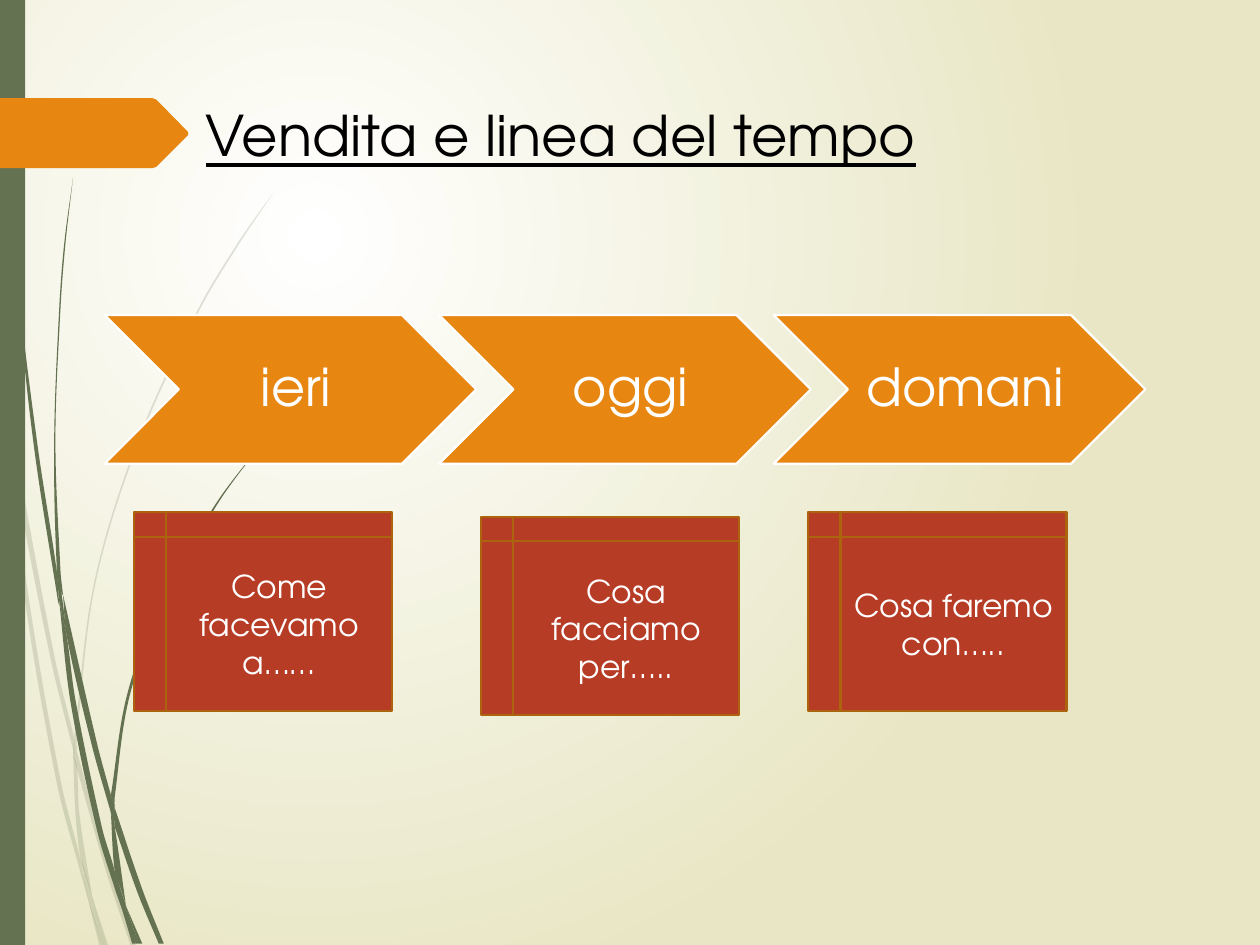
from collections import namedtuple
from math import hypot
from lxml.etree import SubElement
from pptx import Presentation
from pptx.dml.color import RGBColor
from pptx.enum.shapes import MSO_SHAPE
from pptx.enum.text import MSO_ANCHOR, PP_ALIGN
from pptx.oxml.ns import qn
from pptx.util import Inches, Pt

COLORS = {
    "paper": "FFFFFF",
    "cream": "E8E6C4",
    "moss": "647252",
    "orange": "E78712",
    "brick": "B73C26",
    "bronze": "AB640D",
    "ink": "000000",
}
FONT = "TeX Gyre Adventor"
COLUMNS, ROWS = 100, 75
CELL = Inches(0.1)
Box = namedtuple("Box", "left top width height")

FADED_BLADES = [
    ([(0.8, 35), (0.6, 32.2), (0, 28.2)], [(0, 29.9), (0.7, 34.4), (0.8, 35)]),
    ([(1, 34.5), (1.2, 37.6), (4, 52.2), (5.9, 59.9)], [(5.9, 58.6), (4.3, 52), (1, 34.5)]),
    ([(6.1, 59.6), (6.4, 60.7), (8.8, 69.2), (10.8, 75.1)],
     [(10.4, 75.1), (8.5, 69.4), (6.1, 61)]),
    ([(7.3, 71.1), (8.6, 75.1)], [(8.3, 75.1), (7.3, 71.1)]),
    ([(0.8, 35), (1.2, 37.6), (2.2, 46.9), (4.8, 61.9), (6.4, 68.3), (7, 71.4)],
     [(6.4, 69.3), (4.5, 62.1), (1.9, 47), (0.8, 35)]),
    ([(5.8, 59.9), (6.1, 60.8), (6.3, 64.6), (7.3, 71.1)],
     [(6.7, 69.2), (6.4, 68.3), (6, 64.6), (5.8, 59.9)]),
    ([(21.7, 15.3), (20.1, 17.5), (18.6, 19.7), (15.8, 24.4), (11, 34.8), (7.5, 46.1), (5.9, 58.4)],
     [(6.1, 59.6), (6.1, 58.4), (7.6, 46.2), (11.1, 34.9), (15.9, 24.5), (18.7, 19.8), (21.7, 15.3)]),
    ([(7, 71.4), (8.2, 75.1)], [(7.9, 75.1), (7, 71.4)]),
    ([(5.9, 58.6), (6.1, 59.6), (6.1, 61)], [(5.8, 59.9), (5.9, 58.6)]),
    ([(6.5, 68.3), (7.3, 71.1), (8.3, 75.1)], [(8.2, 75.1), (7, 71.4), (6.5, 68.3)]),
]
DARK_BLADES = [
    ([(0.3, 0), (0.4, 4.8), (0.6, 10.9), (1.5, 23.2), (3, 35.5), (4.5, 45.3), (4.7, 48.1)],
     [(4.6, 47.7), (2.7, 35.5), (1.4, 23.3), (0.5, 11), (0.3, 4.8), (0.2, 0)]),
    ([(5, 47.2), (7.7, 59), (8.8, 63.1)], [(8.8, 64.5), (7.3, 59.2), (5.3, 50.5), (5, 47.2)]),
    ([(9.1, 64.1), (11.3, 70.6), (13, 74.9)], [(12.6, 74.9), (10.9, 70.8), (9.1, 65.6)]),
    ([(4.7, 47.7), (5.3, 50.5), (6, 55.6), (8.1, 65.7), (9.1, 69.1), (9.7, 72.2)],
     [(9.2, 70.8), (7.7, 65.9), (5.6, 55.7), (4.7, 47.7)]),
    ([(5.8, 14.1), (5.2, 19.3), (4.8, 24.5), (4.4, 34.9), (4.8, 45.3), (5, 47.2)],
     [(4.9, 47.2), (4.5, 44.9), (4.3, 34.9), (4.7, 24.5), (5.1, 19.3), (5.8, 14.1)]),
    ([(10, 71.9), (11.3, 74.9)], [(11, 74.9), (10, 71.9)]),
    ([(4.5, 44.9), (4.9, 47.2), (5.3, 50.5)], [(4.7, 47.7), (4.5, 45.3), (4.5, 44.9)]),
    ([(21.6, 34.4), (19.1, 37.3), (16.8, 40.5), (12.9, 47.4), (10.1, 55.1), (8.8, 63.1)],
     [(9.1, 64.1), (9.1, 63.3), (10.3, 55.2), (13.1, 47.6), (16.9, 40.6), (19.1, 37.4), (21.6, 34.4)]),
    ([(9.7, 72.2), (10.8, 74.9)], [(10.5, 74.9), (9.7, 72.2)]),
    ([(8.8, 64.5), (9.1, 65.6), (10, 71.9)], [(9.6, 70.6), (9.1, 69.1), (8.8, 64.5)]),
    ([(8.8, 63.1), (9.1, 64.1), (9.1, 65.6)], [(8.8, 64.5), (8.8, 63.1)]),
    ([(9.1, 69.1), (10, 71.9), (11, 74.9)], [(10.8, 74.9), (9.7, 72.2), (9.1, 69.1)]),
]


def color(name):
    return RGBColor.from_string(COLORS[name])


def cells(*lengths):
    return [round(length * CELL) for length in lengths]


def paint(shape, fill, line=None):
    shape.shadow.inherit = False
    shape.fill.solid()
    shape.fill.fore_color.rgb = color(fill)
    if line:
        shape.line.color.rgb = color(line)
        shape.line.width = Pt(1.25)
    else:
        shape.line.fill.background()


def write(shape, text, size, ink, alignment, anchor):
    frame = shape.text_frame
    frame.word_wrap = True
    frame.vertical_anchor = anchor
    paragraph = frame.paragraphs[0]
    paragraph.text = text
    paragraph.alignment = alignment
    paragraph.font.size = Pt(size)
    paragraph.font.name = FONT
    paragraph.font.color.rgb = color(ink)
    return paragraph


def add_preset(slide, kind, box, fill, line=None):
    shape = slide.shapes.add_shape(kind, *cells(*box))
    paint(shape, fill, line)
    return shape


def add_outline(slide, box, points, fill):
    placed = [cells(box.left + x, box.top + y) for x, y in points]
    builder = slide.shapes.build_freeform(*placed[0], scale=1)
    builder.add_line_segments(placed[1:], close=True)
    shape = builder.convert_to_shape()
    paint(shape, fill)
    return shape


def shift(point, before, after, reach):
    across, down = after[0] - before[0], after[1] - before[1]
    share = reach / hypot(across, down)
    return point[0] + across * share, point[1] + down * share


def bezier_points(edge):
    padded = [edge[0], *edge, edge[-1]]
    for before, start, end, after in zip(padded, padded[1:], padded[2:], padded[3:]):
        reach = hypot(end[0] - start[0], end[1] - start[1]) / 3
        yield from (shift(start, before, end, reach), shift(end, start, after, -reach), end)


def add_blade(slide, box, edges, opacity):
    first, second = edges
    turn = [] if first[-1] == second[0] else [first[-1], second[0], second[0]]
    points = [first[0], *bezier_points(first), *turn, *bezier_points(second)]
    blade = add_outline(slide, box, points, "moss")
    lines = list(blade.element.iter(qn("a:lnTo")))
    for curve, *others in zip(lines[::3], lines[1::3], lines[2::3]):
        curve.tag = qn("a:cubicBezTo")
        for line in others:
            curve.append(line[0])
            line.getparent().remove(line)
    if opacity < 100:
        fill_color = blade.element.find(".//" + qn("a:solidFill"))[0]
        SubElement(fill_color, qn("a:alpha"), val=str(opacity * 1000))


def add_background(slide):
    fill = slide.background.fill
    fill.gradient()
    for stop, name in zip(fill.gradient_stops, ("paper", "cream")):
        stop.color.rgb = color(name)
    gradient = slide.element.find(".//" + qn("a:gradFill"))
    gradient.remove(gradient.find(qn("a:lin")))
    circle = SubElement(gradient, qn("a:path"), path="circle")
    SubElement(circle, qn("a:fillToRect"), l="50000", t="50000", r="100000", b="100000")


def add_grass(slide, box):
    for blades, opacity in ((FADED_BLADES, 20), (DARK_BLADES, 100)):
        for edges in blades:
            add_blade(slide, box, edges, opacity)
    add_preset(slide, MSO_SHAPE.RECTANGLE, box._replace(width=2), "moss")


def add_header(slide, box, title):
    tag = [(0, 0.35), (12.1, 0.35), (12.4, 0.45), (14.9, 3), (14.95, 3.15),
           (14.9, 3.3), (12.4, 5.8), (12.1, 5.9), (0, 5.9)]
    add_outline(slide, box, tag, "orange")
    offset = 15.35
    text_box = slide.shapes.add_textbox(
        *cells(box.left + offset, box.top, box.width - offset, box.height))
    paragraph = write(text_box, title, 32, "ink", PP_ALIGN.LEFT, MSO_ANCHOR.TOP)
    paragraph.font.underline = True


def add_timeline(slide, box, labels):
    width = 29.5
    pitch = (box.width - width) / (len(labels) - 1)
    for index, label in enumerate(labels):
        place = Box(box.left + index * pitch, box.top, width, box.height)
        chevron = add_preset(slide, MSO_SHAPE.CHEVRON, place, "orange", "paper")
        paragraph = write(chevron, label, 30, "paper", PP_ALIGN.CENTER, MSO_ANCHOR.MIDDLE)
        paragraph.line_spacing = 0.9
        frame = chevron.text_frame
        frame.margin_left = Inches(0.13)
        frame.margin_right = frame.margin_top = frame.margin_bottom = Inches(0.04)


def add_cards(slide, box, cards):
    for text, left, drop in cards:
        place = Box(box.left + left, box.top + drop, 20.5, box.height)
        card = add_preset(slide, MSO_SHAPE.FLOWCHART_INTERNAL_STORAGE, place, "brick", "bronze")
        write(card, text, 18, "paper", PP_ALIGN.CENTER, MSO_ANCHOR.MIDDLE)


def main():
    presentation = Presentation()
    presentation.slide_width, presentation.slide_height = cells(COLUMNS, ROWS)
    slide = presentation.slides.add_slide(presentation.slide_layouts[6])
    add_background(slide)
    add_grass(slide, Box(0, 0, COLUMNS, ROWS))
    add_header(slide, Box(0, 7.45, 98.1, 6.4), "Vendita e linea del tempo")
    add_timeline(slide, Box(8.3, 25, 82.6, 11.8), ["ieri", "oggi", "domani"])
    add_cards(slide, Box(10.63, 40.65, 74.1, 15.75), [
        ("Come facevamo a……", 0, 0),
        ("Cosa facciamo per…..", 27.54, 0.35),
        ("Cosa faremo con…..", 53.52, 0),
    ])
    presentation.save("out.pptx")


if __name__ == "__main__":
    main()
